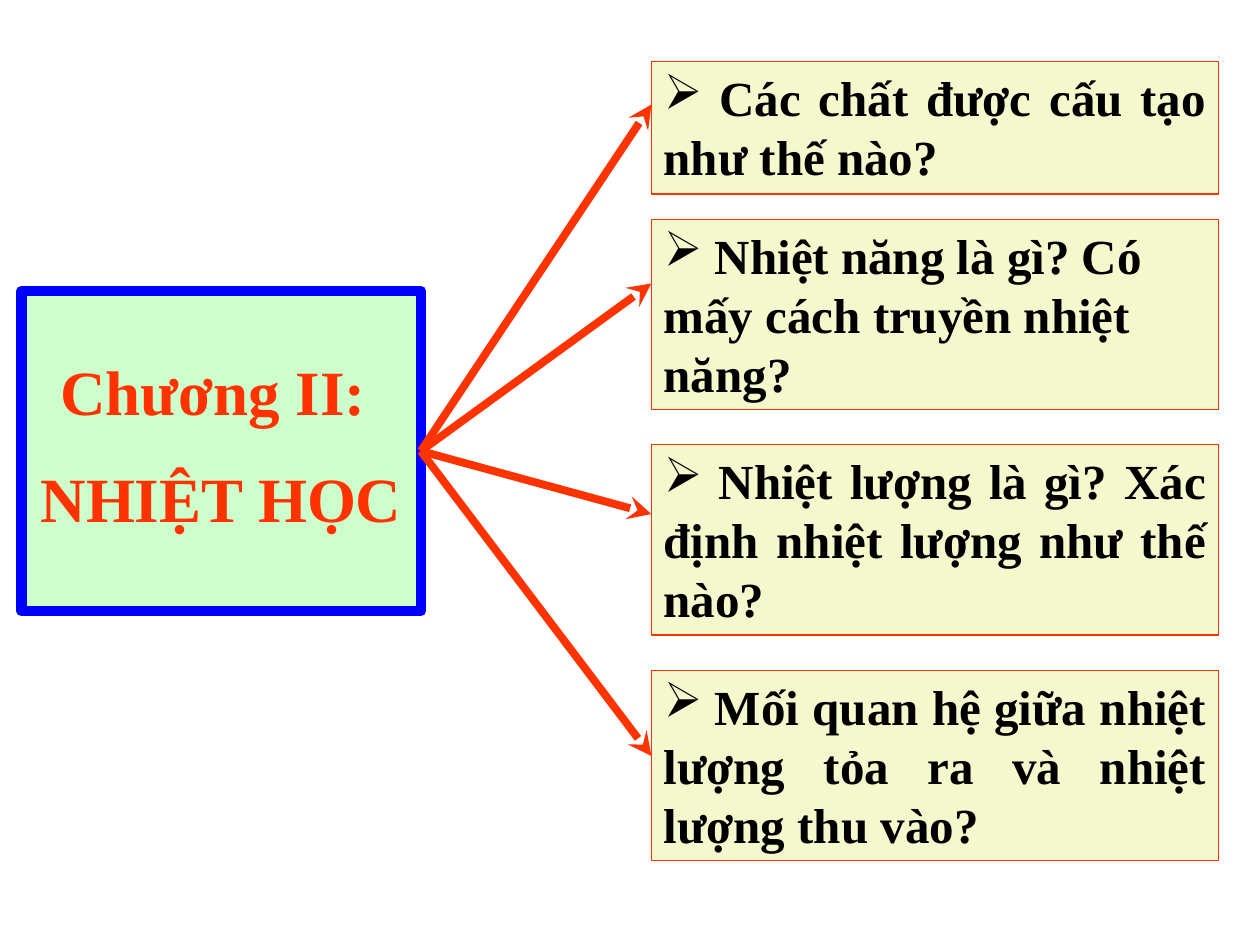
import pptx
import pptx.dml.color
import pptx.enum.shapes
import pptx.enum.text
import pptx.util
from lxml import etree
from pptx.oxml.ns import qn

Inches = pptx.util.Inches
Pt = pptx.util.Pt
RGBColor = pptx.dml.color.RGBColor
ALIGN = pptx.enum.text.PP_ALIGN

RED = RGBColor(0xFF, 0x33, 0x00)
BLUE = RGBColor(0x00, 0x00, 0xFF)
GREEN = RGBColor(0xCC, 0xFF, 0xCC)
CREAM = RGBColor(0xF5, 0xF8, 0xCC)
BLACK = RGBColor(0x00, 0x00, 0x00)


def add_text(p, text, size=28, color=BLACK, font="Times New Roman", bold=True):
    r = p.add_run()
    r.text = text
    r.font.size = Pt(size)
    r.font.name = font
    r.font.bold = bold
    r.font.color.rgb = color


class SlideBuilder:
    def __init__(self, prs):
        self.s = prs.slides.add_slide(prs.slide_layouts[5])

    def paint(self, sp, fill, line, width):
        sp.fill.solid()
        sp.fill.fore_color.rgb = fill
        sp.line.color.rgb = line
        sp.line.width = Pt(width)

    def title(self, lines, x, y, w, h):
        sp = self.s.shapes.title
        sp.left, sp.top, sp.width, sp.height = (Inches(v) for v in (x, y, w, h))
        self.paint(sp, GREEN, BLUE, 6)
        tf = sp.text_frame
        tf.word_wrap = True
        tf.auto_size = pptx.enum.text.MSO_AUTO_SIZE.NONE
        tf.vertical_anchor = pptx.enum.text.MSO_ANCHOR.MIDDLE
        tf.margin_bottom = Inches(0.17)
        for i, text in enumerate(lines):
            p = tf.add_paragraph() if i else tf.paragraphs[0]
            p.alignment = ALIGN.CENTER
            p.space_before = Pt(18 if i else 0)
            add_text(p, text, size=36, color=RED)
        return sp

    def question(self, text, x, y, w, h, align, space_font):
        sp = self.s.shapes.add_shape(
            pptx.enum.shapes.MSO_SHAPE.RECTANGLE,
            Inches(x), Inches(y), Inches(w), Inches(h))
        sp.shadow.inherit = False
        self.paint(sp, CREAM, RED, 0.75)
        tf = sp.text_frame
        tf.word_wrap = True
        tf.vertical_anchor = pptx.enum.text.MSO_ANCHOR.TOP
        p = tf.paragraphs[0]
        p.alignment = align
        pPr = p._p.get_or_add_pPr()
        pPr.set("marL", "0")
        pPr.set("indent", "0")
        etree.SubElement(pPr, qn("a:buChar")).set("char", "➢")
        add_text(p, " ", font=space_font)
        add_text(p, text)

    def arrow(self, source, x, y):
        c = self.s.shapes.add_connector(
            pptx.enum.shapes.MSO_CONNECTOR.STRAIGHT,
            source.left + source.width, source.top + source.height // 2,
            Inches(x), Inches(y))
        c.begin_connect(source, 3)
        c.line.color.rgb = RED
        c.line.width = Pt(4.5)
        etree.SubElement(c.line._get_or_add_ln(), qn("a:tailEnd")).set("type", "stealth")
        etree.SubElement(c._element.spPr, qn("a:effectLst"))


def main():
    prs = pptx.Presentation()
    prs.slide_width = Inches(10)
    prs.slide_height = Inches(7.5)
    slide = SlideBuilder(prs)
    chapter = slide.title(["Chương II: ", "NHIỆT HỌC"], 0.17, 2.31, 3.17, 2.54)

    left, width = 5.17, 4.5
    questions = [
        ("Các chất được cấu tạo như thế nào?", 0.49, 1.05, 0.83, ALIGN.JUSTIFY, "Calibri"),
        ("Nhiệt năng là gì? Có mấy cách truyền nhiệt năng?",
         1.74, 1.51, 2.25, ALIGN.LEFT, "Times New Roman"),
        ("Nhiệt lượng là gì? Xác định nhiệt lượng như thế nào?",
         3.53, 1.51, 4.08, ALIGN.JUSTIFY, "Calibri"),
        ("Mối quan hệ giữa nhiệt lượng tỏa ra và nhiệt lượng thu vào?",
         5.32, 1.51, 6, ALIGN.JUSTIFY, "Calibri"),
    ]
    for text, top, height, _, align, space_font in questions:
        slide.question(text, left, top, width, height, align, space_font)
    for _, _, _, arrow_y, _, _ in questions:
        slide.arrow(chapter, left, arrow_y)

    prs.save("out.pptx")


if __name__ == "__main__":
    main()
